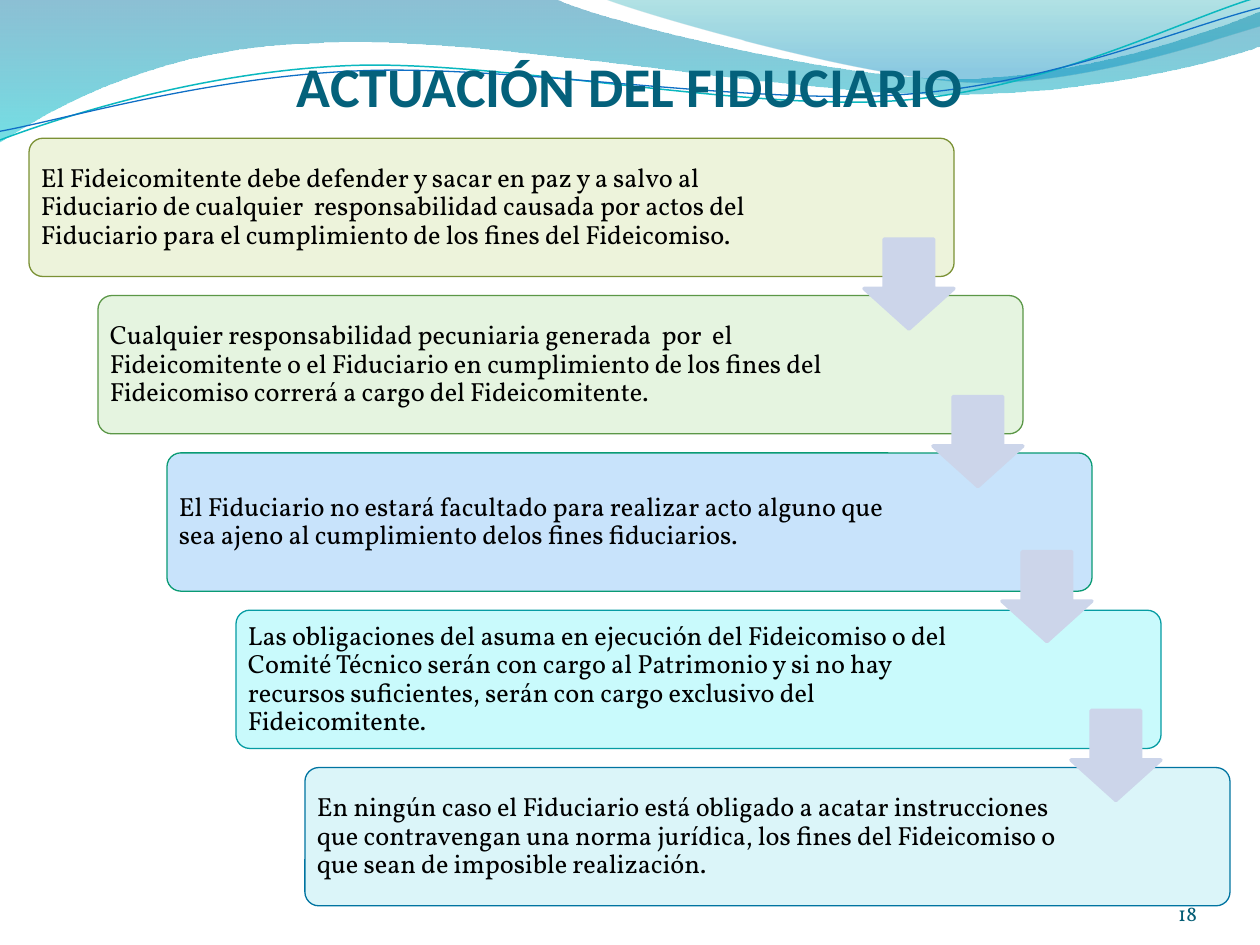
import math
from dataclasses import dataclass
from typing import Optional

import pptx
import pptx.dml.color
import pptx.enum.shapes
import pptx.enum.text
import pptx.util
from lxml import etree

Pt = pptx.util.Pt
SHAPE = pptx.enum.shapes.MSO_SHAPE
ALIGN = pptx.enum.text.PP_ALIGN
ANCHOR = pptx.enum.text.MSO_ANCHOR
A = "{http://schemas.openxmlformats.org/drawingml/2006/main}"
STEP_X, STEP_Y = 39.42, 89.9
ARROW_TOPS = (136.6, 226.6, 315.2, 406)


@dataclass
class Stop:
    position: float
    color: str
    opacity: int


@dataclass
class Wave:
    box: tuple
    start: tuple
    segments: list
    stops: Optional[list] = None
    line: Optional[str] = None
    width: float = 0
    rotation: float = 0


@dataclass
class Step:
    text: str
    fill: str
    line: str


WAVES = [
    Wave((-0.7, -0.7, 721.4, 82.1), (0, 0), [
        (317, -0.7), (343, 12, 478, 45, 546, 45), (614, 45, 690, 19, 720, 6.5),
        (720.7, 26), (708, 32, 626, 55, 537, 54), (448, 54, 275, 20, 185, 24.5),
        (93, 26, 33, 60, -0.7, 81.4),
    ], stops=[Stop(0, "0074A1", 45), Stop(1, "00C6CF", 55)]),
    Wave((344.9, -0.7, 375.1, 50.4), (344.9, -0.7), [
        (366.5, 8, 491, 44.5, 553.5, 47), (616, 49.7, 692, 23, 720, 15), (720, 0),
    ], stops=[Stop(0, "00A1A9", 30), Stop(0.8, "008BBF", 45)]),
    Wave((-1.4, 15.8, 721.4, 51.1), (0, 80), [
        (34.5, 67, 114, 41, 199.5, 37.5), (284.5, 34, 427, 64, 513.5, 57.5),
        (600, 51, 675.5, 11, 718.5, -1.5),
    ], line="0AB8BF", width=0.85, rotation=357.3),
    Wave((-1.4, 21.6, 722.2, 41.8), (0, 75), [
        (34, 69, 118, 44, 204, 40.5), (290, 36.5, 430, 60.5, 516, 54),
        (602, 48, 677.5, 15, 720, 4.5),
    ], line="0F6FC6", width=0.75, rotation=357.3),
]

STEPS = [
    Step("El Fideicomitente debe defender y sacar en paz y a salvo al Fiduciario de "
         "cualquier  responsabilidad causada por actos del Fiduciario para el "
         "cumplimiento de los fines del Fideicomiso.", "EDF3DB", "7B9135"),
    Step("Cualquier responsabilidad pecuniaria generada  por  el Fideicomitente o el "
         "Fiduciario en cumplimiento de los fines del Fideicomiso correrá a cargo del "
         "Fideicomitente.", "E5F4E0", "5B9747"),
    Step("El Fiduciario no estará facultado para realizar acto alguno que sea ajeno al "
         "cumplimiento delos fines fiduciarios.", "C8E3FB", "0A9B74"),
    Step("Las obligaciones del asuma en ejecución del Fideicomiso o del Comité Técnico "
         "serán con cargo al Patrimonio y si no hay recursos suficientes, serán con "
         "cargo exclusivo del Fideicomitente.", "C9FAFC", "069CA3"),
    Step("En ningún caso el Fiduciario está obligado a acatar instrucciones que "
         "contravengan una norma jurídica, los fines del Fideicomiso o que sean de "
         "imposible realización.", "DBF5F9", "0074A1"),
]


def rgb(value: str) -> pptx.dml.color.RGBColor:
    return pptx.dml.color.RGBColor.from_string(value)


def set_opacity(element, percent: int) -> None:
    for clr in element.iter(A + "srgbClr"):
        etree.SubElement(clr, A + "alpha", val=str(percent * 1000))


def place(sp, box: tuple) -> None:
    sp.left, sp.top, sp.width, sp.height = map(Pt, box)


def local_point(wave: Wave, x: float, y: float) -> tuple:
    left, top, width, height = wave.box
    angle = -math.radians(wave.rotation)
    dx, dy = x - left - width / 2, y - top - height / 2
    return (Pt(width / 2 + dx * math.cos(angle) - dy * math.sin(angle)),
            Pt(height / 2 + dx * math.sin(angle) + dy * math.cos(angle)))


def add_command(outline, tag: str, wave: Wave, values: tuple) -> None:
    command = etree.SubElement(outline, A + tag)
    for x, y in zip(values[::2], values[1::2]):
        px, py = local_point(wave, x, y)
        etree.SubElement(command, A + "pt", x=str(px), y=str(py))


def draw_wave(s, wave: Wave) -> None:
    builder = s.shapes.build_freeform(*map(Pt, wave.start))
    builder.add_line_segments([tuple(map(Pt, seg[-2:])) for seg in wave.segments],
                              close=False)
    sp = builder.convert_to_shape()
    place(sp, wave.box)
    sp.rotation = wave.rotation
    sp.shadow.inherit = False

    outline = next(sp._element.iter(A + "path"))
    for command in list(outline):
        outline.remove(command)
    outline.set("w", str(sp.width))
    outline.set("h", str(sp.height))
    add_command(outline, "moveTo", wave, wave.start)
    for segment in wave.segments:
        add_command(outline, "lnTo" if len(segment) == 2 else "cubicBezTo", wave, segment)

    if wave.stops:
        etree.SubElement(outline, A + "close")
        sp.line.fill.background()
        sp.fill.gradient()
        sp.fill.gradient_angle = 270
        for target, stop in zip(sp.fill.gradient_stops, wave.stops):
            target.position = stop.position
            target.color.rgb = rgb(stop.color)
            set_opacity(target.color._xFill, stop.opacity)
    else:
        sp.fill.background()
        sp.line.color.rgb = rgb(wave.line)
        sp.line.width = Pt(wave.width)


def write(sp, text: str, font: str, size: float, color: str, align, anchor,
          insets: tuple, bold: bool = False):
    tf = sp.text_frame
    tf.word_wrap = True
    tf.auto_size = pptx.enum.text.MSO_AUTO_SIZE.NONE
    tf.vertical_anchor = anchor
    tf.margin_left, tf.margin_top, tf.margin_right, tf.margin_bottom = map(Pt, insets)
    tf.text = text
    p = tf.paragraphs[0]
    p.alignment = align
    r = p.runs[0]
    r.font.name, r.font.size, r.font.bold = font, Pt(size), bold
    r.font.color.rgb = rgb(color)
    return p


def add_shape(s, kind, box: tuple, fill: str, line: str, width: float, adjust: tuple):
    sp = s.shapes.add_shape(kind, *map(Pt, box))
    sp.shadow.inherit = False
    for i, value in enumerate(adjust):
        sp.adjustments[i] = value
    sp.fill.solid()
    sp.fill.fore_color.rgb = rgb(fill)
    sp.line.color.rgb = rgb(line)
    sp.line.width = Pt(width)


def draw_step(s, index: int, step: Step) -> None:
    left, top = 16.6 + index * STEP_X, 79 + index * STEP_Y
    add_shape(s, SHAPE.ROUNDED_RECTANGLE, (left, top, 528.6, 79), step.fill,
              step.line, 0.75, (0.1,))
    sp = s.shapes.add_textbox(*map(Pt, (left + 2.3, top + 2.3, 433, 74.4)))
    p = write(sp, step.text, "Vollkorn", 15, "000000", ALIGN.LEFT, ANCHOR.MIDDLE,
              (4.5,) * 4)
    p.line_spacing = 0.9


def main() -> None:
    prs = pptx.Presentation()
    prs.slide_width, prs.slide_height = Pt(720), Pt(540)
    s = prs.slides.add_slide(prs.slide_layouts[5])
    for wave in WAVES:
        draw_wave(s, wave)

    title = s.shapes.title
    s.shapes._spTree.append(title._element)
    place(title, (36, 21.6, 648, 46))
    write(title, "ACTUACIÓN DEL FIDUCIARIO", "Calibri", 32, "04617B", ALIGN.CENTER,
          ANCHOR.BOTTOM, (0, 3.6, 0, 0), bold=True)
    number = s.shapes.add_textbox(*map(Pt, (624, 500.2, 60, 28.8)))
    write(number, "18", "Vollkorn", 12, "045D75", ALIGN.RIGHT, ANCHOR.BOTTOM, (0,) * 4)

    for index, step in enumerate(STEPS):
        draw_step(s, index, step)
    for index, top in enumerate(ARROW_TOPS):
        add_shape(s, SHAPE.DOWN_ARROW, (493.7 + index * STEP_X, top, 51.4, 51.4),
                  "CCD5EA", "CCD5EA", 2, (0.55, 0.45))
    prs.save("out.pptx")


if __name__ == "__main__":
    main()
